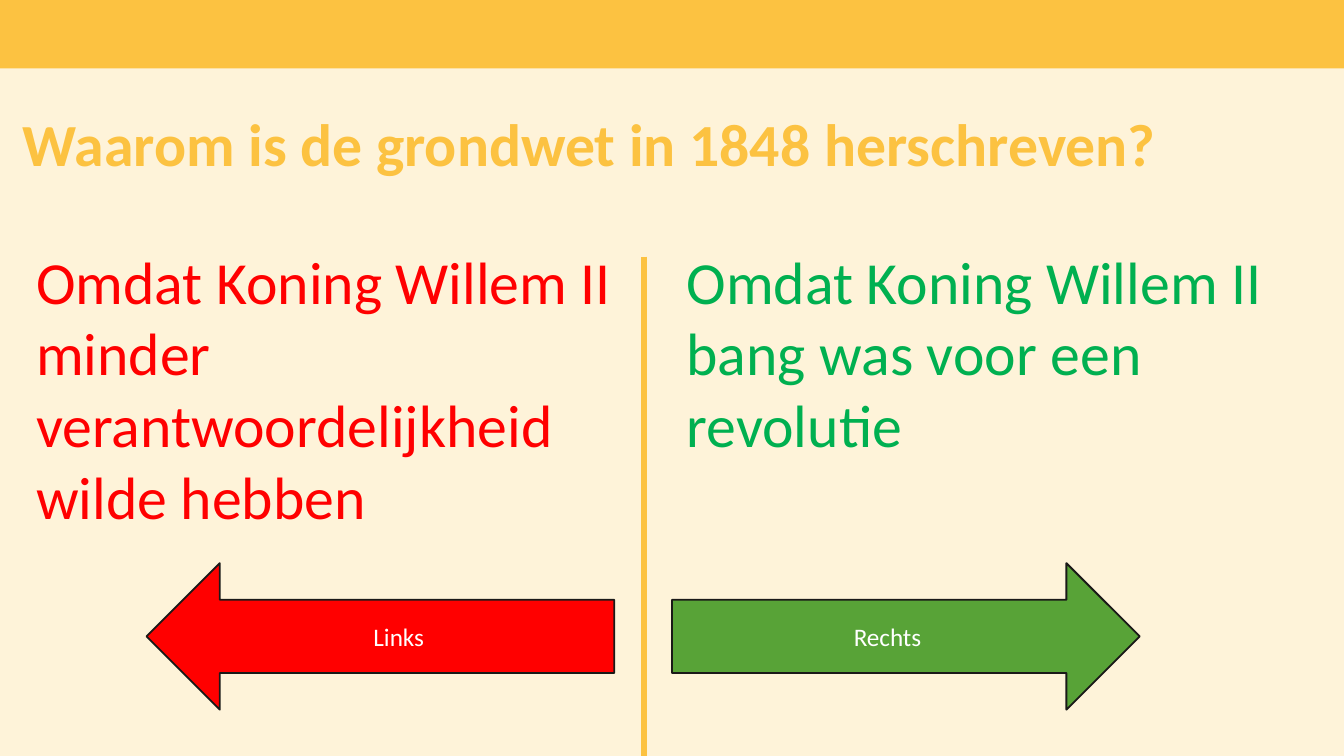
from pptx import Presentation
from pptx.dml.color import RGBColor
from pptx.enum import shapes, text
from pptx.oxml.ns import qn
from pptx.util import Inches, Pt
from lxml import etree

WIDTH = 10
HEIGHT = WIDTH * 9 / 16
GOLD, CREAM, INK, WHITE = "FCC241", "FEF3D9", "1A1918", "FFFFFF"
ARROW = shapes.MSO_SHAPE

QUESTION = "Waarom is de grondwet in 1848 herschreven?"
# answer, text colour, text box (left, width, height)
ANSWERS = [
    ("Omdat Koning Willem II minder verantwoordelijkheid wilde hebben",
     "FF0000", (0.17, 4.51, 2.26)),
    ("Omdat Koning Willem II bang was voor een revolutie",
     "00B050", (5.01, 4.86, 1.72)),
]
# label, arrow shape, fill, left
ARROWS = [
    ("Links", ARROW.LEFT_ARROW, "FF0000", 1.09),
    ("Rechts", ARROW.RIGHT_ARROW, "58A337", 5),
]


def color(hex_code):
    return RGBColor.from_string(hex_code)


def fill(item, hex_code):
    item.fill.solid()
    item.fill.fore_color.rgb = color(hex_code)


def write(para, words, size, hex_code, bold=False):
    span = para.add_run()
    span.text = words
    span.font.name = "Calibri"
    span.font.size = Pt(size)
    span.font.bold = bold
    span.font.color.rgb = color(hex_code)


def add_shape(page, kind, hex_code, left, top, width, height):
    shape = page.shapes.add_shape(
        kind, Inches(left), Inches(top), Inches(width), Inches(height))
    shape.shadow.inherit = False
    fill(shape, hex_code)
    return shape


def add_title(page):
    title = page.shapes.title
    title.left, title.top = Inches(0.17), Inches(0.78)
    title.width, title.height = Inches(9.93), Inches(0.98)
    frame = title.text_frame
    frame.word_wrap = True
    frame.auto_size = text.MSO_AUTO_SIZE.NONE
    frame.vertical_anchor = text.MSO_ANCHOR.TOP
    frame.margin_left = frame.margin_right = frame.margin_bottom = 0
    frame.margin_top = Inches(0.05)
    para = frame.paragraphs[0]
    para.alignment = text.PP_ALIGN.LEFT
    para.line_spacing = Pt(36)
    write(para, QUESTION, 32, GOLD, bold=True)


def add_divider(page):
    divider = page.shapes.add_connector(
        shapes.MSO_CONNECTOR.STRAIGHT,
        Inches(4.79), Inches(1.91), Inches(4.79), Inches(HEIGHT))
    divider.line.color.rgb = color(GOLD)
    divider.line.width = Pt(3)
    etree.SubElement(divider._element.spPr, qn("a:effectLst"))


def add_answer(page, words, hex_code, left, width, height):
    box = page.shapes.add_textbox(
        Inches(left), Inches(1.77), Inches(width), Inches(height))
    box.text_frame.word_wrap = True
    box.text_frame.auto_size = text.MSO_AUTO_SIZE.SHAPE_TO_FIT_TEXT
    write(box.text_frame.paragraphs[0], words, 32, hex_code)


def add_arrow(page, label, kind, hex_code, left):
    arrow = add_shape(page, kind, hex_code, left, 4.19, 3.48, 1.09)
    arrow.line.color.rgb = color(INK)
    arrow.line.width = Pt(1)
    arrow.text_frame.vertical_anchor = text.MSO_ANCHOR.MIDDLE
    para = arrow.text_frame.paragraphs[0]
    para.alignment = text.PP_ALIGN.CENTER
    write(para, label, 13.5, WHITE)


def main():
    deck = Presentation()
    deck.slide_width, deck.slide_height = Inches(WIDTH), Inches(HEIGHT)
    page = deck.slides.add_slide(deck.slide_layouts.get_by_name("Title Only"))
    fill(page.background, CREAM)

    band = add_shape(page, ARROW.RECTANGLE, GOLD, 0, 0, WIDTH, 0.51)
    band.line.fill.background()
    add_title(page)
    add_divider(page)
    for words, hex_code, place in ANSWERS:
        add_answer(page, words, hex_code, *place)
    for arrow in ARROWS:
        add_arrow(page, *arrow)
    deck.save("out.pptx")


if __name__ == "__main__":
    main()
